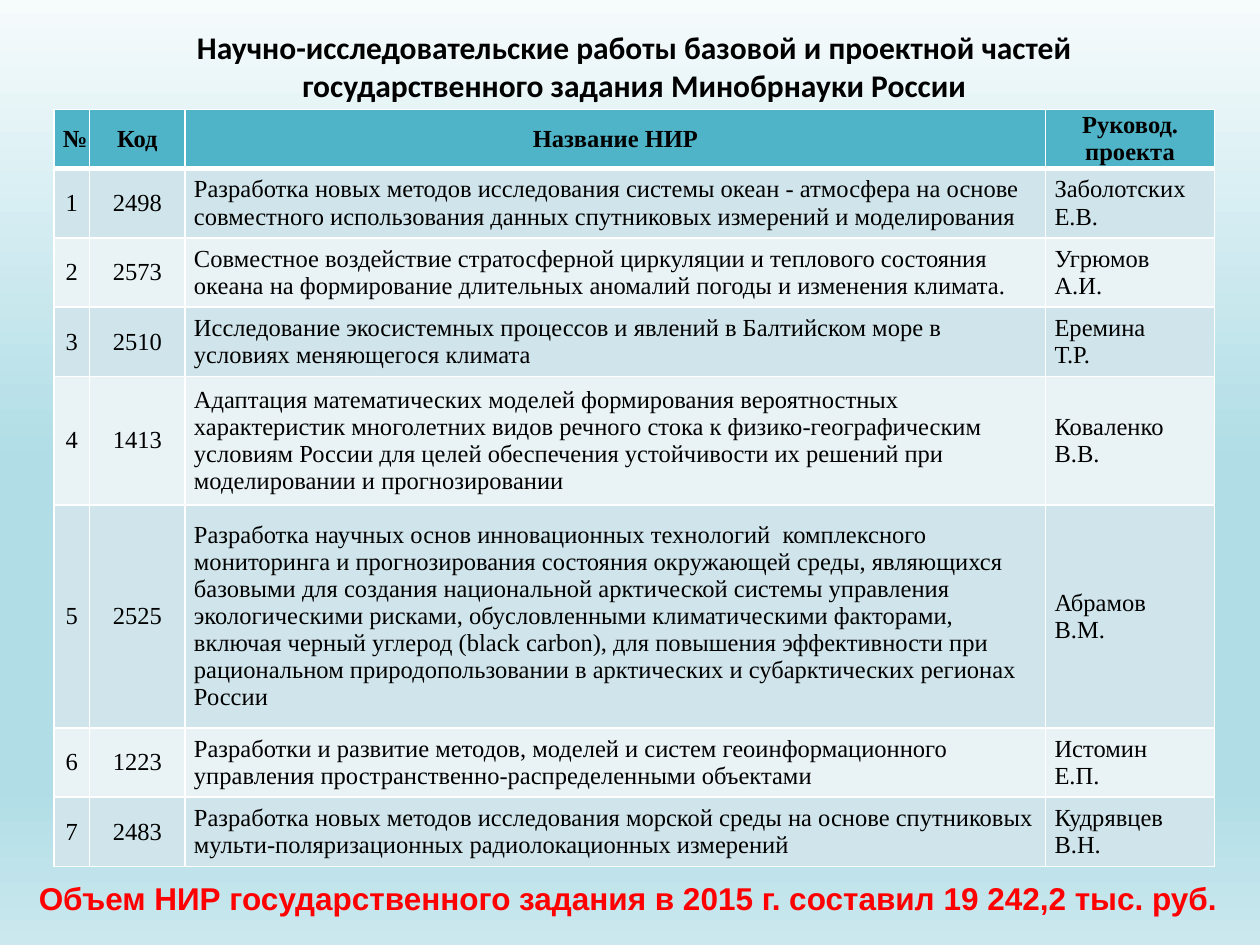
from lxml.etree import SubElement
from pptx import Presentation
from pptx.dml.color import RGBColor
from pptx.enum.text import MSO_ANCHOR as Anchor, MSO_AUTO_SIZE as AutoSize, PP_ALIGN as Align
from pptx.oxml.ns import qn
from pptx.util import Inches, Pt

BLACK = RGBColor(0x00, 0x00, 0x00)
WHITE = RGBColor(0xFF, 0xFF, 0xFF)
RED = RGBColor(0xFF, 0x00, 0x00)
HEADER_FILL = RGBColor(0x50, 0xB4, 0xC8)
BAND_FILLS = [RGBColor(0xD0, 0xE5, 0xEB), RGBColor(0xE9, 0xF2, 0xF5)]
BACKGROUND_STOPS = [
    (0, RGBColor(0xF6, 0xFB, 0xFC)),
    (49, RGBColor(0xB0, 0xDD, 0xE6)),
    (83, RGBColor(0xB0, 0xDD, 0xE6)),
    (100, RGBColor(0xCB, 0xE8, 0xEE)),
]

TITLE_FONT = {"name": "Calibri", "size": Pt(18), "bold": True}
TOTAL_FONT = {"name": "Arial", "size": Pt(18), "bold": True}
HEADER_FONT = {"name": "Times New Roman", "size": Pt(14), "bold": True}
BODY_FONT = {**HEADER_FONT, "bold": False}
CELL_FORMAT = {
    "vertical_anchor": Anchor.MIDDLE,
    "margin_left": Inches(0.07),
    "margin_right": Inches(0.07),
    "margin_top": 0,
    "margin_bottom": 0,
}

TITLE = (
    "Научно-исследовательские работы базовой и проектной частей\n"
    "государственного задания Минобрнауки России"
)
TOTAL = "Объем НИР государственного задания в 2015 г. составил 19 242,2 тыс. руб."
HEADERS = ["№", "Код", "Название НИР", "Руковод. проекта"]
PROJECTS = [
    ("2498", "Разработка новых методов исследования системы океан - атмосфера на основе "
     "совместного использования данных спутниковых измерений и моделирования",
     "Заболотских Е.В."),
    ("2573", "Совместное воздействие стратосферной циркуляции и теплового состояния "
     "океана на формирование длительных аномалий погоды и изменения климата.",
     "Угрюмов\nА.И."),
    ("2510", "Исследование экосистемных процессов и явлений в Балтийском море в "
     "условиях меняющегося климата", "Еремина\nТ.Р."),
    ("1413", "Адаптация математических моделей формирования вероятностных "
     "характеристик многолетних видов речного стока к физико-географическим "
     "условиям России для целей обеспечения устойчивости их решений при "
     "моделировании и прогнозировании", "Коваленко В.В."),
    ("2525", "Разработка научных основ инновационных технологий  комплексного "
     "мониторинга и прогнозирования состояния окружающей среды, являющихся "
     "базовыми для создания национальной арктической системы управления "
     "экологическими рисками, обусловленными климатическими факторами, "
     "включая черный углерод (black carbon), для повышения эффективности при "
     "рациональном природопользовании в арктических и субарктических регионах "
     "России", "Абрамов\nВ.М."),
    ("1223", "Разработки и развитие методов, моделей и систем геоинформационного "
     "управления пространственно-распределенными объектами", "Истомин\nЕ.П."),
    ("2483", "Разработка новых методов исследования морской среды на основе спутниковых "
     "мульти-поляризационных радиолокационных измерений", "Кудрявцев В.Н."),
]
COLUMN_WIDTHS = [0.28, 0.76, 6.83, 1.34]
ROW_HEIGHTS = [0.41, 0.55, 0.55, 0.55, 1.02, 1.77, 0.55, 0.55]


def set_attributes(target, values):
    """Set each named value on the target."""
    for name, value in values.items():
        setattr(target, name, value)


def write_text(text_frame, text, font, color, alignment):
    """Write one paragraph per line with a single format."""
    text_frame.text = text
    for paragraph in text_frame.paragraphs:
        paragraph.alignment = alignment
        for run in paragraph.runs:
            set_attributes(run.font, font)
            run.font.color.rgb = color


def place_text(shape, box, text, font, color):
    """Position a text shape and fill it with centred text."""
    set_attributes(shape, dict(zip(("left", "top", "width", "height"), map(Inches, box))))
    frame_format = {"word_wrap": True, "auto_size": AutoSize.SHAPE_TO_FIT_TEXT,
                    "vertical_anchor": Anchor.TOP}
    set_attributes(shape.text_frame, frame_format)
    write_text(shape.text_frame, text, font, color, Align.CENTER)


def paint_background(slide):
    """Give the slide its vertical gradient."""
    fill = slide.background.fill
    fill.gradient()
    fill.gradient_angle = 270
    stop_list = next(slide.element.iter(qn("a:gsLst")))
    for stop in list(stop_list):
        stop_list.remove(stop)
    for position, color in BACKGROUND_STOPS:
        stop = SubElement(stop_list, qn("a:gs"), pos=str(position * 1000))
        SubElement(stop, qn("a:srgbClr"), val=str(color))


def set_borders(cell, top, bottom):
    """Draw white borders, with top and bottom widths in points."""
    properties = cell._tc.get_or_add_tcPr()
    for side, width in (("L", 1), ("R", 1), ("T", top), ("B", bottom)):
        line = SubElement(properties, qn(f"a:ln{side}"), w=str(Pt(width)))
        fill = SubElement(line, qn("a:solidFill"))
        SubElement(fill, qn("a:srgbClr"), val=str(WHITE))


def format_cell(cell, text, row, column):
    """Write and style one table cell by its place."""
    is_header = row == 0
    centred = is_header or column < 2
    set_attributes(cell, CELL_FORMAT)
    write_text(cell.text_frame, text, HEADER_FONT if is_header else BODY_FONT, BLACK,
               Align.CENTER if centred else Align.LEFT)
    set_borders(cell, 3 if row == 1 else 1, 3 if is_header else 1)
    cell.fill.solid()
    cell.fill.fore_color.rgb = HEADER_FILL if is_header else BAND_FILLS[(row - 1) % 2]


def add_project_table(slide):
    """Add the table of numbered research projects."""
    rows = [HEADERS] + [(str(number), *project) for number, project in enumerate(PROJECTS, 1)]
    table = slide.shapes.add_table(
        len(rows), len(HEADERS), Inches(0.43), Inches(0.87),
        Inches(sum(COLUMN_WIDTHS)), Inches(sum(ROW_HEIGHTS))).table
    for column, width in zip(table.columns, COLUMN_WIDTHS):
        column.width = Inches(width)
    for row, height in zip(table.rows, ROW_HEIGHTS):
        row.height = Inches(height)
    for row, texts in enumerate(rows):
        for column, text in enumerate(texts):
            format_cell(table.cell(row, column), text, row, column)


def main():
    """Build and save the slide."""
    presentation = Presentation()
    set_attributes(presentation, {"slide_width": Inches(10), "slide_height": Inches(7.5)})
    slide = presentation.slides.add_slide(presentation.slide_layouts[5])
    paint_background(slide)
    add_project_table(slide)
    place_text(slide.shapes.title, (0.43, 0.17, 9.21, 0.71), TITLE, TITLE_FONT, BLACK)
    total = slide.shapes.add_textbox(0, 0, 0, 0)
    place_text(total, (-0.03, 6.93, 10.03, 0.4), TOTAL, TOTAL_FONT, RED)
    total.text_frame.paragraphs[0].space_before = Pt(3.6)
    presentation.save("out.pptx")


if __name__ == "__main__":
    main()
